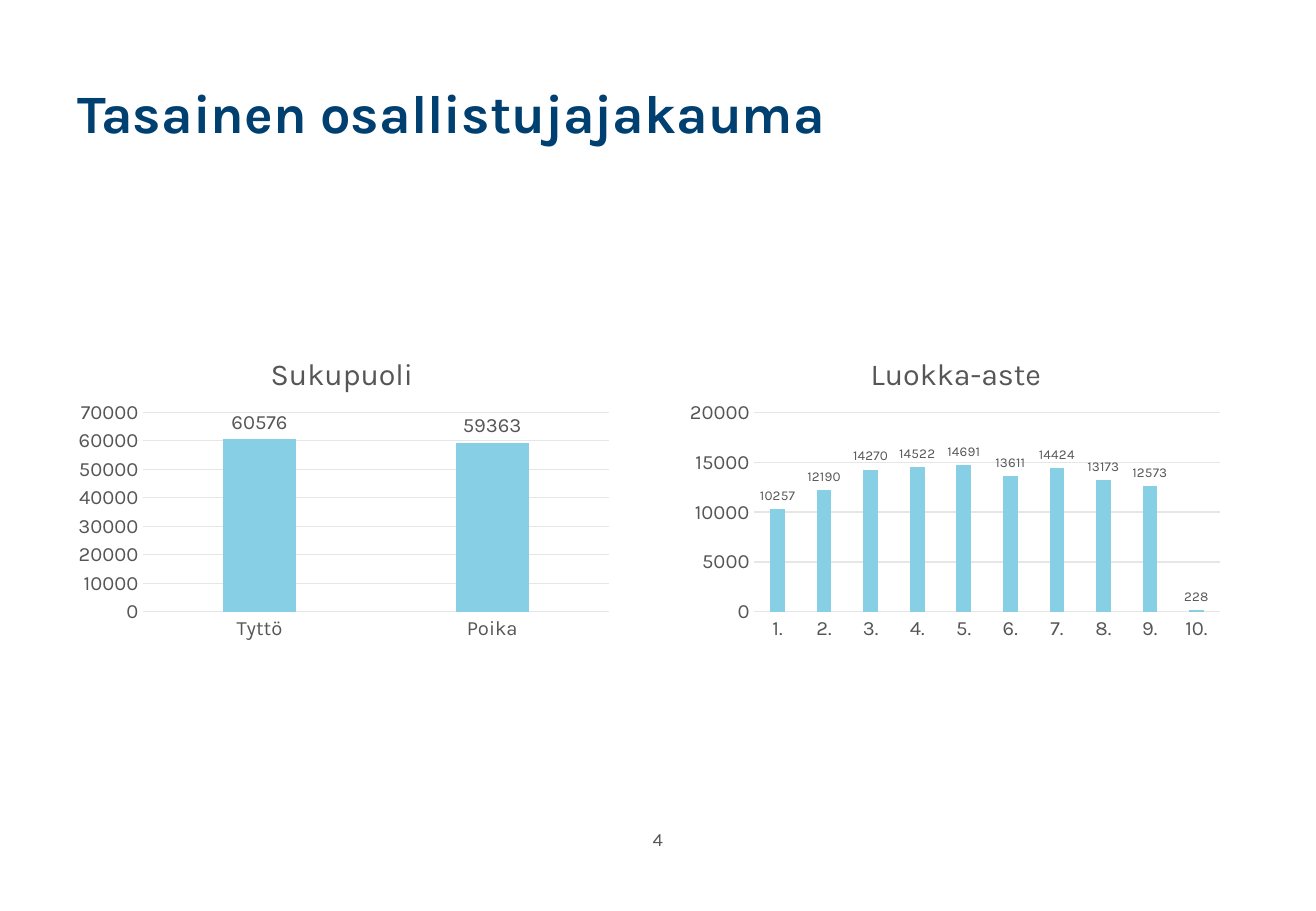
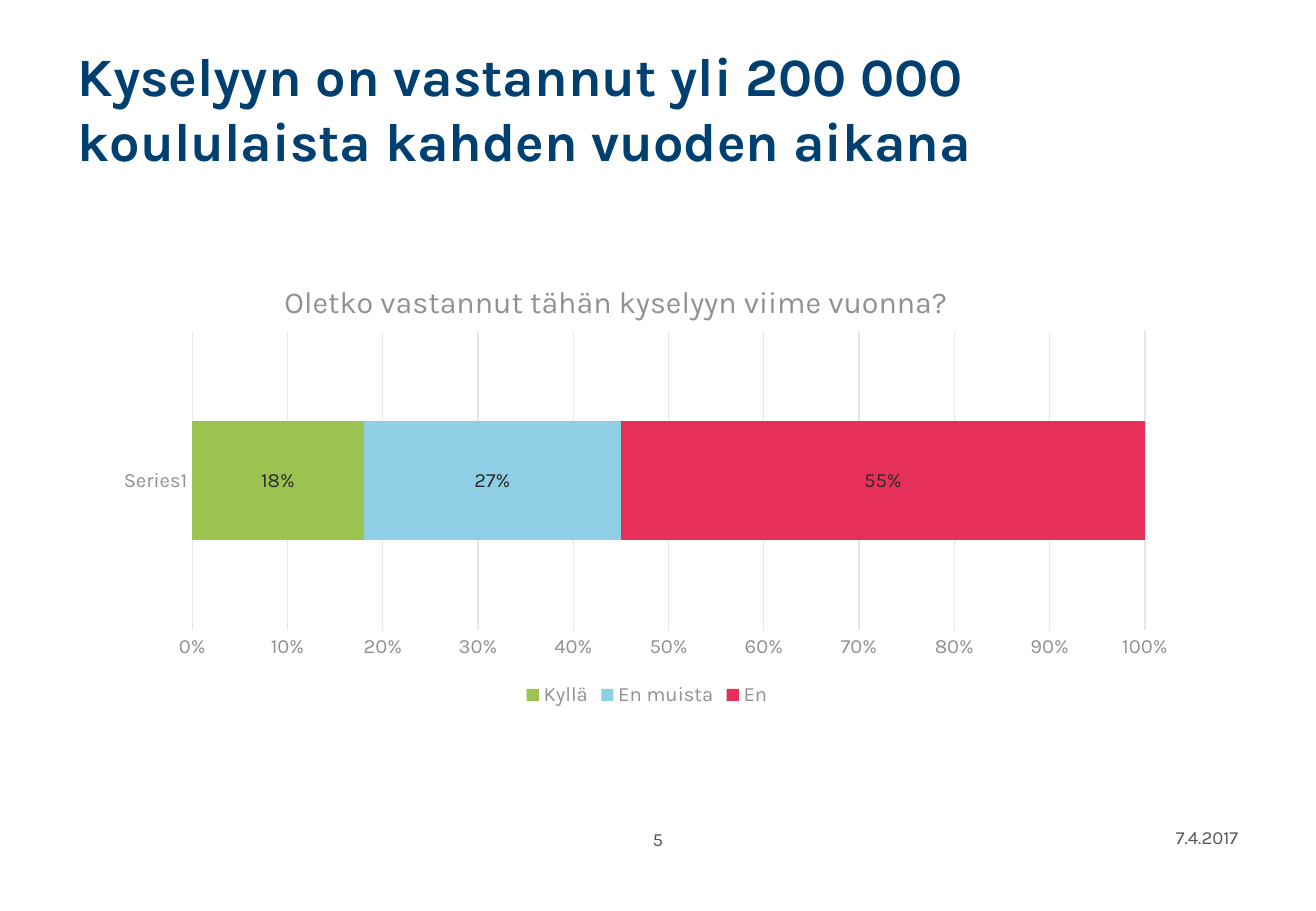
"""Build two survey slides with native charts on respondents."""
from pptx import Presentation
from pptx.chart.data import CategoryChartData
from pptx.dml.color import RGBColor
from pptx.enum.chart import XL_CHART_TYPE as ChartType
from pptx.enum.chart import XL_LABEL_POSITION as LabelPosition
from pptx.enum.chart import XL_LEGEND_POSITION as LegendPosition
from pptx.enum.chart import XL_TICK_MARK as TickMark
from pptx.enum.text import MSO_ANCHOR, MSO_AUTO_SIZE, PP_ALIGN
from pptx.oxml import parse_xml
from pptx.oxml.ns import nsdecls
from pptx.util import Inches, Pt

NAVY, GRAY, LIGHT_GRAY, GRID, DARK = "004070", "565656", "919191", "E6E6E6", "2B2B2B"
SKY, GREEN, BLUE, RED = "86CFE4", "9AC34F", "8ECFE5", "E73059"


def style(font, size, color, bold=False):
    font.name = "Karla"
    font.size = Pt(size)
    font.bold = bold
    font.color.rgb = RGBColor.from_string(color)


def set_layout(element, position, **fractions):
    for old in element.xpath("c:layout"):
        element.remove(old)
    target = '<c:layoutTarget val="inner"/>' if "w" in fractions else ""
    modes = "".join(f'<c:{key}Mode val="edge"/>' for key in ("x", "y"))
    values = "".join(f'<c:{key} val="{value}"/>' for key, value in fractions.items())
    element.insert(position, parse_xml(
        f'<c:layout {nsdecls("c")}><c:manualLayout>{target}{modes}{values}'
        "</c:manualLayout></c:layout>"))


column_plot = dict(x=0.14, y=0.27, w=0.84, h=0.62)
column_style = dict(
    type=ChartType.COLUMN_CLUSTERED, plot=column_plot, color=GRAY, gap=219, overlap=-27,
    label_color=GRAY, label_position=LabelPosition.OUTSIDE_END, format="General", legend=False)

slides = [
    dict(
        title="Tasainen osallistujajakauma", title_top=0.3,
        footers=[("4", 4.25, 6.77, 2.33, PP_ALIGN.CENTER)],
        charts=[
            dict(column_style, box=(0.54, 2.68, 4.56, 2.65), title="Sukupuoli",
                 title_at=dict(x=0.36, y=0.07), scale=(70000, 10000), label_size=12,
                 categories=["Tyttö", "Poika"],
                 series=[("Sukupuoli", [60576, 59363], SKY)]),
            dict(column_style, box=(5.57, 2.68, 4.56, 2.65), title="Luokka-aste",
                 title_at=dict(x=0.34, y=0.07), scale=(20000, 5000), label_size=8,
                 categories=[f"{grade}." for grade in range(1, 11)],
                 series=[("Luokka-aste", [10257, 12190, 14270, 14522, 14691, 13611,
                                          14424, 13173, 12573, 228], SKY)]),
        ]),
    dict(
        title="Kyselyyn on vastannut yli 200 000 koululaista kahden vuoden aikana",
        title_top=0.26,
        footers=[("5", 4.15, 6.77, 2.53, PP_ALIGN.CENTER),
                 ("7.4.2017", 7.76, 6.75, 2.53, PP_ALIGN.RIGHT)],
        charts=[
            dict(type=ChartType.BAR_STACKED_100, box=(0.87, 2.13, 8.91, 3.73),
                 title="Oletko vastannut tähän kyselyyn viime vuonna?",
                 title_at=dict(x=0.16, y=0.04), plot=dict(x=0.08, y=0.16, w=0.88, h=0.66),
                 color=LIGHT_GRAY, gap=150, overlap=100, scale=None, format="0%",
                 label_size=12, label_color=DARK, label_position=LabelPosition.CENTER,
                 legend=True, categories=["Series1"],
                 series=[("Kyllä", [0.18], GREEN), ("En muista", [0.27], BLUE),
                         ("En", [0.55], RED)]),
        ]),
]

presentation = Presentation()
presentation.slide_width = Inches(10.83)
presentation.slide_height = Inches(7.5)

for content in slides:
    slide = presentation.slides.add_slide(presentation.slide_layouts[5])

    title = slide.shapes.title
    title.left, title.top = Inches(0.54), Inches(content["title_top"])
    title.width, title.height = Inches(7.58), Inches(1.25)
    title.text_frame.text = content["title"]
    title.text_frame.auto_size = MSO_AUTO_SIZE.NONE
    title.text_frame.vertical_anchor = MSO_ANCHOR.MIDDLE
    paragraph = title.text_frame.paragraphs[0]
    paragraph.alignment = PP_ALIGN.LEFT
    style(paragraph.font, 32, NAVY, bold=True)

    for item in content["charts"]:
        data = CategoryChartData(number_format=item["format"])
        data.categories = item["categories"]
        for name, values, _ in item["series"]:
            data.add_series(name, values)
        box = [Inches(length) for length in item["box"]]
        chart = slide.shapes.add_chart(item["type"], *box, data).chart
        style(chart.font, 10, GRAY)

        chart.has_title = True
        chart.chart_title.text_frame.text = item["title"]
        style(chart.chart_title.text_frame.paragraphs[0].font, 18, item["color"])
        chart.chart_title.include_in_layout = False
        set_layout(chart.chart_title.element, 1, **item["title_at"])
        set_layout(chart.element.xpath("c:chart/c:plotArea")[0], 0, **item["plot"])

        chart.has_legend = item["legend"]
        if item["legend"]:
            chart.legend.position = LegendPosition.BOTTOM
            chart.legend.include_in_layout = False
            style(chart.legend.font, 12, item["color"])

        category_axis, value_axis = chart.category_axis, chart.value_axis
        for axis in (category_axis, value_axis):
            axis.major_tick_mark = axis.minor_tick_mark = TickMark.NONE
            style(axis.tick_labels.font, 12, item["color"])
        value_axis.has_major_gridlines = True
        for line in (category_axis.format.line, value_axis.major_gridlines.format.line):
            line.color.rgb = RGBColor.from_string(GRID)
            line.width = Pt(0.75)
        value_axis.format.line.fill.background()
        value_axis.tick_labels.number_format = item["format"]
        value_axis.tick_labels.number_format_is_linked = False
        if item["scale"]:
            value_axis.minimum_scale = 0
            value_axis.maximum_scale, value_axis.major_unit = item["scale"]

        plot = chart.plots[0]
        plot.vary_by_categories = False
        plot.gap_width, plot.overlap = item["gap"], item["overlap"]
        for series, (_, _, color) in zip(plot.series, item["series"]):
            series.format.fill.solid()
            series.format.fill.fore_color.rgb = RGBColor.from_string(color)
            labels = series.data_labels
            labels.show_value = True
            labels.position = item["label_position"]
            labels.number_format = item["format"]
            labels.number_format_is_linked = False
            style(labels.font, item["label_size"], item["label_color"])

    for text, left, top, width, alignment in content["footers"]:
        footer = slide.shapes.add_textbox(Inches(left), Inches(top), Inches(width), Inches(0.4))
        footer.text_frame.word_wrap = True
        footer.text_frame.text = text
        paragraph = footer.text_frame.paragraphs[0]
        paragraph.alignment = alignment
        style(paragraph.font, 11, GRAY)

presentation.save("out.pptx")
